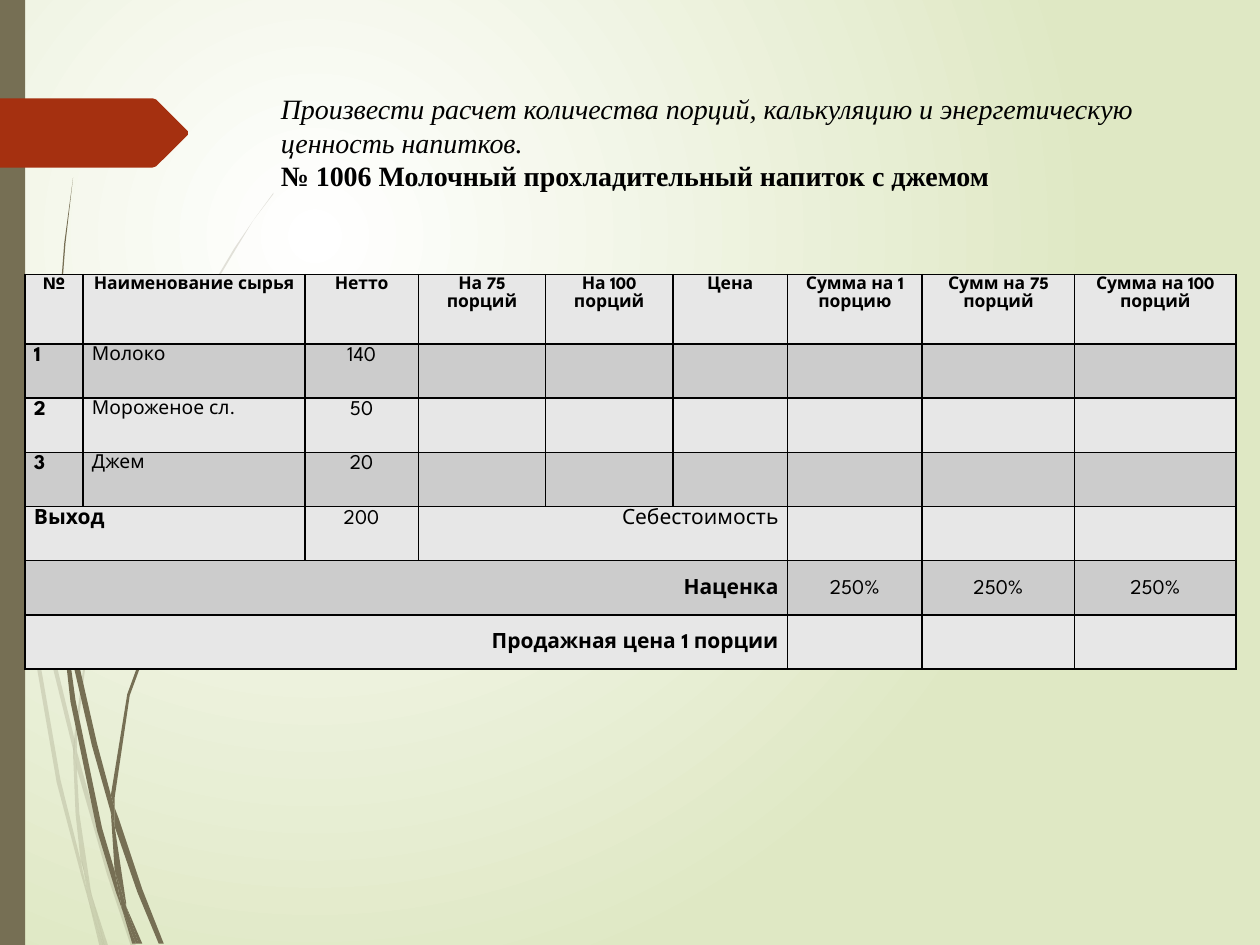
from dataclasses import dataclass
from lxml.etree import SubElement
from pptx import Presentation
from pptx.dml.color import RGBColor
from pptx.enum.shapes import MSO_SHAPE as Shape
from pptx.enum.text import MSO_ANCHOR as Anchor, PP_ALIGN as Align
from pptx.oxml.ns import qn
from pptx.util import Emu, Pt

PX = 9144  # EMU in one px, 100 px to the inch
COLORS = {
    "white": "FFFFFF", "meadow": "DFE8C4", "stem": "766F54", "arrow": "A53010",
    "ink": "000000", "light": "E7E7E7", "dark": "CCCCCC",
}
TITLE_FONT, TABLE_FONT = "Times New Roman", "League Spartan"

Outline = list[tuple[int, int]]


@dataclass
class Entry:
    row: int
    col: int
    text: str
    size: int = 12
    bold: bool = False
    align: Align = Align.CENTER
    span: int = 1
    anchor: Anchor = Anchor.TOP


# Outlines of the grass, from back to front
PALE_STEMS: list[Outline] = [
    [(8, 350), (6, 322), (0, 282), (0, 299), (7, 344)],
    [(40, 522), (59, 599), (59, 586), (43, 520), (10, 345), (12, 376)],
    [(64, 607), (61, 596), (61, 610), (85, 694), (104, 751), (108, 751), (88, 692)],
    [(83, 751), (86, 751), (73, 711)],
    [(64, 683), (48, 619), (22, 469), (12, 376), (8, 350), (19, 470), (45, 621),
     (64, 693), (70, 714), (69, 707)],
    [(58, 599), (60, 646), (64, 683), (67, 692), (73, 711), (72, 706), (63, 646),
     (61, 610), (61, 608)],
    [(61, 584), (76, 462), (111, 349), (159, 245), (187, 198), (201, 175), (217, 154),
     (217, 153), (201, 175), (186, 197), (158, 244), (110, 348), (75, 461), (59, 584),
     (59, 586), (61, 596)],
    [(70, 714), (79, 751), (82, 751)],
    [(61, 608), (61, 610), (61, 596), (59, 586), (58, 599)],
    [(67, 692), (65, 683), (69, 707), (70, 714), (82, 751), (83, 751), (73, 711)],
]
DARK_STEMS: list[Outline] = [
    [(5, 110), (14, 233), (27, 355), (46, 477), (47, 481), (45, 457), (45, 453),
     (30, 355), (15, 232), (6, 109), (4, 48), (3, 0), (2, 0), (3, 48)],
    [(73, 592), (88, 645), (88, 633), (88, 631), (77, 590), (50, 472), (53, 505)],
    [(94, 649), (91, 641), (91, 656), (109, 708), (126, 749), (130, 749), (113, 706)],
    [(91, 691), (81, 657), (60, 556), (53, 505), (47, 477), (56, 557), (77, 659),
     (92, 708), (97, 722), (96, 717)],
    [(50, 472), (48, 453), (44, 349), (48, 245), (52, 193), (58, 141), (51, 193),
     (47, 245), (43, 349), (45, 449), (49, 472)],
    [(110, 749), (113, 749), (100, 719)],
    [(47, 477), (53, 505), (50, 472), (49, 472), (45, 449), (45, 453)],
    [(91, 633), (103, 552), (131, 476), (169, 406), (191, 374), (203, 359), (216, 344),
     (215, 344), (203, 358), (191, 373), (168, 405), (129, 474), (101, 551), (88, 631),
     (91, 641)],
    [(97, 722), (105, 749), (108, 749)],
    [(88, 645), (91, 691), (96, 706), (100, 719), (100, 716), (91, 656), (90, 651)],
    [(88, 645), (90, 651), (91, 656), (91, 641), (88, 631), (88, 633)],
    [(96, 706), (91, 691), (96, 717), (97, 722), (108, 749), (110, 749), (100, 719)],
]
ARROW: Outline = [(149, 107), (124, 132), (121, 133), (0, 133), (0, 78), (121, 78),
                  (124, 79), (149, 104)]

# Calculation table
COLUMNS = [46, 176, 90, 101, 101, 91, 107, 121, 128]
ROWS = [55] + [43] * 6
HEADINGS = ["№", "Наименование сырья", "Нетто", "На 75 порций", "На 100 порций", "Цена",
            "Сумма на 1 порцию", "Сумм на 75 порций", "Сумма на 100 порций"]
INGREDIENTS = [("Молоко", "140"), ("Мороженое сл.", "50"), ("Джем", "20")]
TOTALS = [
    Entry(4, 0, "Выход", bold=True, align=Align.LEFT, span=2),
    Entry(4, 2, "200"),
    Entry(4, 3, "Себестоимость", align=Align.RIGHT, span=3),
    Entry(5, 0, "Наценка", bold=True, align=Align.RIGHT, span=6, anchor=Anchor.MIDDLE),
    *[Entry(5, col, "250%", anchor=Anchor.MIDDLE) for col in (6, 7, 8)],
    Entry(6, 0, "Продажная цена 1 порции", bold=True, align=Align.RIGHT, span=6,
          anchor=Anchor.MIDDLE),
]


def px(length: int) -> Emu:
    return Emu(length * PX)


def rgb(name: str) -> RGBColor:
    return RGBColor.from_string(COLORS[name])


def paint(shape, color: str) -> None:
    shape.shadow.inherit = False
    shape.fill.solid()
    shape.fill.fore_color.rgb = rgb(color)
    shape.line.fill.background()


def draw_outline(slide, outline: Outline, color: str, opacity: int = 100) -> None:
    builder = slide.shapes.build_freeform(*outline[0], scale=PX)
    builder.add_line_segments(outline[1:], close=True)
    shape = builder.convert_to_shape()
    paint(shape, color)
    if opacity < 100:
        tint = shape.element.spPr.find(f"{qn('a:solidFill')}/{qn('a:srgbClr')}")
        SubElement(tint, qn("a:alpha"), val=str(opacity * 1000))


def draw_background(slide) -> None:
    fill = slide.background.fill
    fill.gradient()
    for stop, color, position in zip(fill.gradient_stops, ("white", "meadow"), (0, 1)):
        stop.color.rgb = rgb(color)
        stop.position = position
    gradient = slide.element.find(f".//{qn('a:gradFill')}")
    gradient.remove(gradient.find(qn("a:lin")))
    circle = SubElement(gradient, qn("a:path"), path="circle")
    SubElement(circle, qn("a:fillToRect"), l="50000", t="50000", r="100000", b="100000")


def draw_title(slide) -> None:
    frame = slide.shapes.add_textbox(px(213), px(68), px(721), px(140)).text_frame
    frame.word_wrap = True
    paragraph = frame.paragraphs[0]
    task = paragraph.add_run()
    task.text = ("Произвести расчет количества порций, калькуляцию "
                 "и энергетическую ценность напитков.")
    paragraph.add_line_break()
    drink = paragraph.add_run()
    drink.text = "№ 1006 Молочный прохладительный напиток с джемом"
    for run in (task, drink):
        run.font.name, run.font.size = TITLE_FONT, Pt(16)
        run.font.color.rgb = rgb("ink")
    task.font.italic = True
    drink.font.bold = True


def style_cell(cell, color: str) -> None:
    properties = cell._tc.get_or_add_tcPr()
    for side in ("a:lnL", "a:lnR", "a:lnT", "a:lnB"):
        border = SubElement(properties, qn(side), w=str(Pt(1)))
        SubElement(SubElement(border, qn("a:solidFill")), qn("a:srgbClr"), val=COLORS["ink"])
    cell.fill.solid()
    cell.fill.fore_color.rgb = rgb(color)
    cell.margin_left = cell.margin_right = px(7)
    cell.margin_top = cell.margin_bottom = 0


def write_entry(table, entry: Entry) -> None:
    cell = table.cell(entry.row, entry.col)
    if entry.span > 1:
        cell.merge(table.cell(entry.row, entry.col + entry.span - 1))
    cell.vertical_anchor = entry.anchor
    paragraph = cell.text_frame.paragraphs[0]
    paragraph.text = entry.text
    paragraph.alignment, paragraph.line_spacing = entry.align, 1.15
    font = paragraph.font
    font.name, font.size, font.bold = TABLE_FONT, Pt(entry.size), entry.bold
    font.color.rgb = rgb("ink")


def draw_table(slide) -> None:
    table = slide.shapes.add_table(len(ROWS), len(COLUMNS), px(20), px(218),
                                   px(sum(COLUMNS)), px(sum(ROWS))).table
    table.first_row = table.horz_banding = False
    for column, width in zip(table.columns, COLUMNS):
        column.width = px(width)
    for index, (row, height) in enumerate(zip(table.rows, ROWS)):
        row.height = px(height)
        for cell in row.cells:
            style_cell(cell, "dark" if index % 2 else "light")
    entries = [Entry(0, col, heading, 10, True) for col, heading in enumerate(HEADINGS)]
    for row, (name, net) in enumerate(INGREDIENTS, start=1):
        entries += [Entry(row, 0, str(row), bold=True, align=Align.LEFT),
                    Entry(row, 1, name, 11, align=Align.LEFT), Entry(row, 2, net)]
    for entry in entries + TOTALS:
        write_entry(table, entry)


def main() -> None:
    deck = Presentation()
    deck.slide_width, deck.slide_height = px(1000), px(750)
    slide = deck.slides.add_slide(deck.slide_layouts[6])
    draw_background(slide)
    # Grass, side bar and arrow
    for stem in PALE_STEMS:
        draw_outline(slide, stem, "stem", opacity=20)
    for stem in DARK_STEMS:
        draw_outline(slide, stem, "stem")
    paint(slide.shapes.add_shape(Shape.RECTANGLE, 0, 0, px(20), px(750)), "stem")
    draw_outline(slide, ARROW, "arrow")
    # Content
    draw_title(slide)
    draw_table(slide)
    deck.save("out.pptx")


if __name__ == "__main__":
    main()
